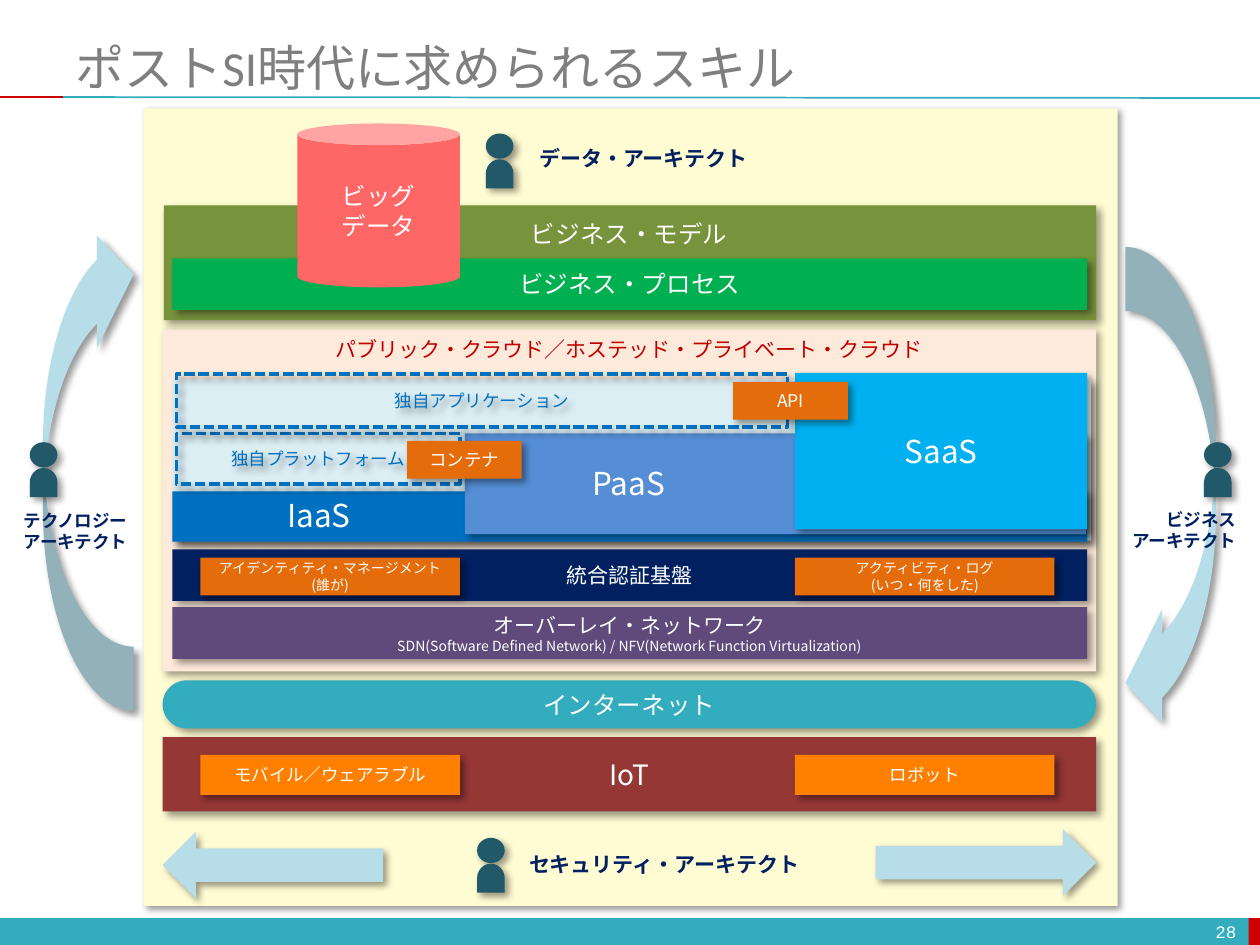
from lxml import etree
from pptx import Presentation
from pptx.dml.color import RGBColor
from pptx.enum import dml, shapes, text
from pptx.oxml import ns
from pptx.util import Pt

SANS = "Noto Sans CJK JP"
WHITE, TEAL, RED, NAVY = "FFFFFF", "33ACBD", "CC0000", "002060"
BLUE, ORANGE, AMBER, PALE, FIGURE = "0070C0", "E46C0A", "FF8000", "B7DEE8", "215968"
KIND = shapes.MSO_SHAPE
LEFT, CENTER, RIGHT = text.PP_ALIGN.LEFT, text.PP_ALIGN.CENTER, text.PP_ALIGN.RIGHT

# Shared columns: left, width
OUTER = (92.9, 533.5)
INNER = (98.6, 522.7)
TAG_LEFT, TAG_RIGHT = (114.5, 148.3), (454.3, 148.3)

TITLE = "ポストSI時代に求められるスキル"
PAGE_NUMBER = "28"

# Plain panels: (left, width), top, height, fill
PANELS = [
    ((82.1, 556.6), 61.9, 455.8, "FFFBD2"),
    (OUTER, 187.9, 195.8, "FDEADA"),
    ((98.6, 524.9), 216.7, 92.2, "DBEEF4"),
    ((93.6, 532.8), 117.4, 65.5, "77933C"),
    (INNER, 280.8, 28.8, BLUE),
    ((265.7, 355), 247.7, 57.6, "558ED5"),
]

# Labelled blocks: (left, width), top, height, fill, lines, sizes
BLOCKS = [
    (INNER, 147.6, 29.5, "00B050", ["ビジネス・プロセス"], [14]),
    ((454.3, 167), 213.1, 89.3, "00B0F0", ["SaaS"], [18]),
    ((100.8, 162), 247.7, 28.8, None, ["独自プラットフォーム"], [10]),
    ((100.8, 349.2), 213.8, 30.2, None, ["独自アプリケーション"], [10]),
    (INNER, 313.9, 29.5, NAVY, ["統合認証基盤"], [12]),
    (INNER, 347, 29.5, "604A7B", [
        "オーバーレイ・ネットワーク",
        "SDN(Software Defined Network) / NFV(Network Function Virtualization)"], [12, 8]),
    (OUTER, 421.2, 42.5, "953735", ["IoT"], [16]),
    (TAG_LEFT, 431.3, 23, AMBER, ["モバイル／ウェアラブル"], [10]),
    (TAG_RIGHT, 431.3, 23, AMBER, ["ロボット"], [10]),
    ((419, 65.5), 218.2, 21.6, ORANGE, ["API"], [10]),
    ((232.6, 65.5), 252, 21.6, ORANGE, ["コンテナ"], [10]),
    (TAG_LEFT, 318.7, 21.6, ORANGE, ["アイデンティティ・マネージメント", "(誰が)"], [8, 8]),
    (TAG_RIGHT, 318.7, 21.6, ORANGE, ["アクティビティ・ログ", "(いつ・何をした)"], [8, 8]),
]

# Free labels: left, top, width, height, lines, size, colour, alignment
LABELS = [
    (327.6, 261.4, 63.4, 28.8, ["PaaS"], 18, WHITE, CENTER),
    (154.1, 280.1, 56.2, 28.8, ["IaaS"], 18, WHITE, CENTER),
    (182.9, 188.6, 353.5, 21.6,
     ["パブリック・クラウド／ホステッド・プライベート・クラウド"], 12, "C00000", CENTER),
    (295.9, 121.7, 127.4, 24.5, ["ビジネス・モデル"], 14, WHITE, CENTER),
]

# Architects: figure left and top, then the label as above
ARCHITECTS = [
    (16.6, 252.7, (6.5, 288, 74.9, 31.7, ["テクノロジー", "アーキテクト"], 10, NAVY, LEFT)),
    (687.6, 252.7, (638.6, 287.5, 74.9, 31.7, ["ビジネス", "アーキテクト"], 10, NAVY, RIGHT)),
    (272.2, 478.8, (295.2, 483.1, 172.1, 21.6, ["セキュリティ・アーキテクト"], 12, NAVY, LEFT)),
    (277.2, 76.3, (301, 79.9, 135.4, 21.6, ["データ・アーキテクト"], 12, NAVY, LEFT)),
]

# Arrows: kind, left, top, width, height, rotation, adjustments
BEND = (0.707, 1.245, 0.406)
ARROWS = [
    (KIND.CURVED_LEFT_ARROW, 24.5, 124.6, 51.8, 281.5, 180, BEND),
    (KIND.CURVED_LEFT_ARROW, 643, 141.1, 51.8, 281.5, 0, BEND),
    (KIND.RIGHT_ARROW, 500.4, 473.8, 126, 38.2, 0, ()),
    (KIND.RIGHT_ARROW, 92.9, 475.2, 126, 38.2, 180, ()),
]


def color(code):
    return RGBColor.from_string(code)


def add_shadow(shape):
    shape.shadow.inherit = False
    effects = shape._element.spPr.find(ns.qn("a:effectLst"))
    outer = etree.SubElement(effects, ns.qn("a:outerShdw"), blurRad=str(Pt(4)),
                             dist=str(Pt(3)), dir="2700000", algn="tl", rotWithShape="0")
    black = etree.SubElement(outer, ns.qn("a:srgbClr"), val="000000")
    etree.SubElement(black, ns.qn("a:alpha"), val="40000")


def add_part(parent, kind, left, top, width, height, fill, shadow=True, turn=0, adjust=()):
    shape = parent.shapes.add_shape(kind, Pt(left), Pt(top), Pt(width), Pt(height))
    shape.rotation = turn
    for index, value in enumerate(adjust):
        shape.adjustments[index] = value
    if fill:
        shape.fill.solid()
        shape.fill.fore_color.rgb = color(fill)
        shape.line.fill.background()
    else:
        shape.fill.background()
        shape.line.color.rgb = color(BLUE)
        shape.line.width = Pt(2)
        shape.line.dash_style = dml.MSO_LINE.SQUARE_DOT
    if shadow:
        add_shadow(shape)
    else:
        shape.shadow.inherit = False
    return shape


def write(box, lines, sizes, ink, align=CENTER, bold=False, font=SANS):
    frame = box.text_frame
    frame.text = "\n".join(lines)
    frame.vertical_anchor = text.MSO_ANCHOR.MIDDLE
    for para, size in zip(frame.paragraphs, sizes):
        para.alignment = align
        for span in para.runs:
            span.font.name, span.font.size, span.font.bold = font, Pt(size), bold
            span.font.color.rgb = color(ink)
            east = etree.SubElement(span.font._element, ns.qn("a:ea"))
            east.set("typeface", SANS)


def add_label(page, left, top, width, height, lines, size, ink, align, bold=False):
    box = page.shapes.add_textbox(Pt(left), Pt(top), Pt(width), Pt(height))
    write(box, lines, [size] * len(lines), ink, align, bold)
    box.text_frame.word_wrap = False
    box.text_frame.auto_size = text.MSO_AUTO_SIZE.SHAPE_TO_FIT_TEXT
    box.text_frame.vertical_anchor = text.MSO_ANCHOR.TOP


def add_rule(page, x1, y1, x2, y2, ink):
    rule = page.shapes.add_connector(shapes.MSO_CONNECTOR.STRAIGHT, Pt(x1), Pt(y1), Pt(x2), Pt(y2))
    rule.line.color.rgb = color(ink)
    rule.line.width = Pt(1)
    etree.SubElement(rule._element.spPr, ns.qn("a:effectLst"))


def main():
    deck = Presentation()
    deck.slide_width, deck.slide_height = Pt(720), Pt(540)
    page = deck.slides.add_slide(deck.slide_layouts[5])

    # Title, rules and footer
    title = page.shapes.title
    title.left, title.top, title.width, title.height = Pt(36), Pt(21.6), Pt(684), Pt(33.1)
    write(title, [TITLE], [28], "7F7F7F", LEFT, font="Calibri")
    title.text_frame.auto_size = text.MSO_AUTO_SIZE.NONE
    add_rule(page, 36, 55.5, 720, 56, TEAL)
    add_rule(page, 0, 55.5, 36, 55.5, RED)
    add_part(page, KIND.RECTANGLE, 0, 524.6, 720, 15.4, TEAL, shadow=False)
    add_part(page, KIND.RECTANGLE, 713.5, 524.6, 6.5, 15.4, RED, shadow=False)
    number = page.shapes.add_textbox(Pt(545.8), Pt(523.4), Pt(167.8), Pt(17.3))
    write(number, [PAGE_NUMBER], [10], WHITE, RIGHT, font="Courier New")

    # Layer stack
    for (left, width), top, height, fill in PANELS:
        add_part(page, KIND.RECTANGLE, left, top, width, height, fill)
    for (left, width), top, height, fill, lines, sizes in BLOCKS:
        block = add_part(page, KIND.RECTANGLE, left, top, width, height, fill)
        write(block, lines, sizes, WHITE if fill else BLUE)
    internet = add_part(page, KIND.ROUNDED_RECTANGLE, OUTER[0], 388.8, OUTER[1], 27.4,
                        TEAL, adjust=(0.5,))
    write(internet, ["インターネット"], [14], WHITE)
    for label in LABELS:
        add_label(page, *label)

    # Arrows, then the architects over them
    for kind, left, top, width, height, turn, adjust in ARROWS:
        add_part(page, kind, left, top, width, height, PALE, turn=turn, adjust=adjust)
    for left, top, label in ARCHITECTS:
        person = page.shapes.add_group_shape()
        add_part(person, KIND.OVAL, left + 0.4, top, 15.8, 14.4, FIGURE)
        add_part(person, KIND.FLOWCHART_DELAY, left, top + 15.1, 16.6, 15.8, FIGURE, turn=270)
        add_label(page, *label, bold=True)

    # Data store
    store = add_part(page, KIND.CAN, 169.9, 70.6, 92.9, 93.6, "FF6666", shadow=False, adjust=(0.133,))
    write(store, ["ビッグ", "データ"], [14, 14], WHITE)

    deck.save("out.pptx")


if __name__ == "__main__":
    main()
